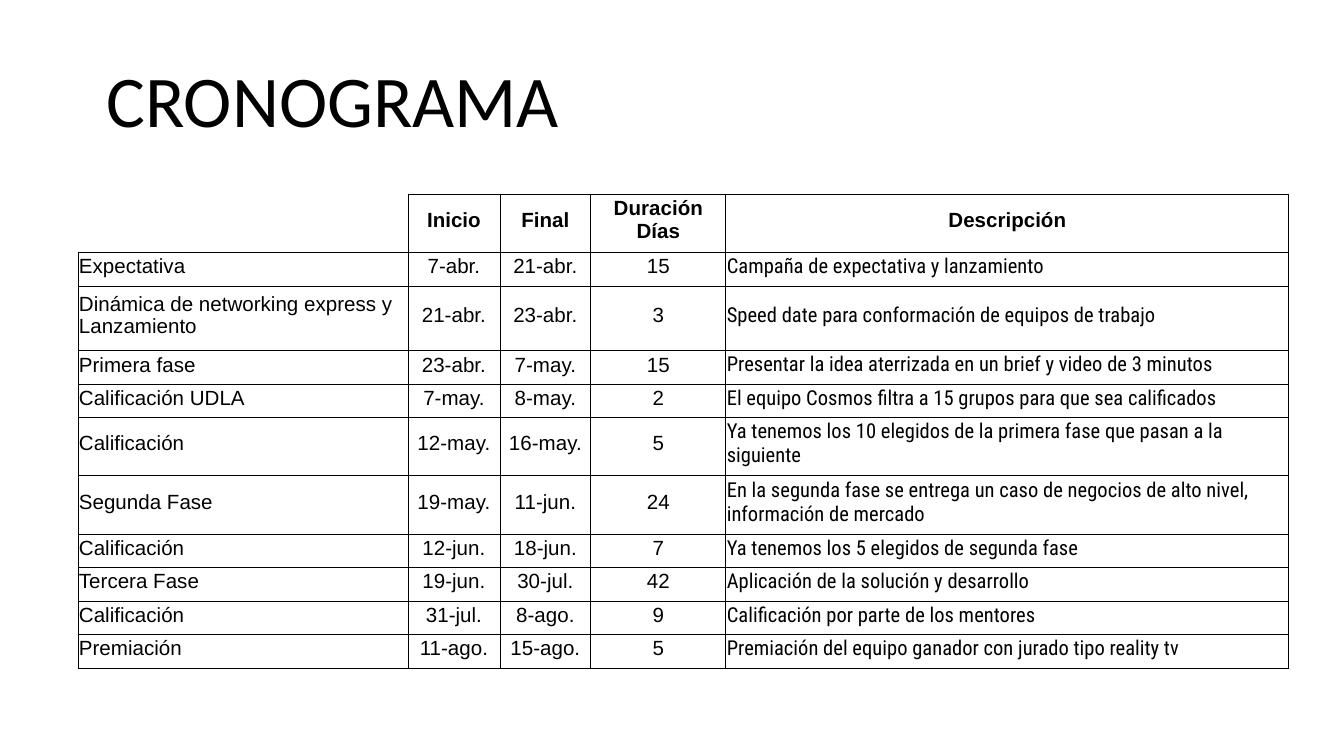
from lxml.etree import SubElement
from pptx import Presentation
from pptx.dml.color import RGBColor
from pptx.enum.text import MSO_ANCHOR, PP_ALIGN
from pptx.oxml.ns import qn
from pptx.util import Pt

COLORS = {"ink": "000000", "paper": "FFFFFF"}
TITLE = "CRONOGRAMA"
HEADINGS = ("", "Inicio", "Final", "Duración Días", "Descripción")
PHASES = [
    ("Expectativa", "7-abr.", "21-abr.", 15, "Campaña de expectativa y lanzamiento"),
    ("Dinámica de networking express y Lanzamiento", "21-abr.", "23-abr.", 3,
     "Speed date para conformación de equipos de trabajo"),
    ("Primera fase", "23-abr.", "7-may.", 15,
     "Presentar la idea aterrizada en un brief y video de 3 minutos"),
    ("Calificación UDLA", "7-may.", "8-may.", 2,
     "El equipo Cosmos filtra a 15 grupos para que sea calificados"),
    ("Calificación", "12-may.", "16-may.", 5,
     "Ya tenemos los 10 elegidos de la primera fase que pasan a la siguiente"),
    ("Segunda Fase", "19-may.", "11-jun.", 24,
     "En la segunda fase se entrega un caso de negocios de alto nivel, información de mercado"),
    ("Calificación", "12-jun.", "18-jun.", 7, "Ya tenemos los 5 elegidos de segunda fase"),
    ("Tercera Fase", "19-jun.", "30-jul.", 42, "Aplicación de la solución y desarrollo"),
    ("Calificación", "31-jul.", "8-ago.", 9, "Calificación por parte de los mentores"),
    ("Premiación", "11-ago.", "15-ago.", 5,
     "Premiación del equipo ganador con jurado tipo reality tv"),
]
COLUMN_WIDTHS = (330, 92, 91, 135, 563)
ROW_HEIGHTS = (58, 34, 65, 34, 33, 58, 59, 33, 34, 33, 34)
TITLE_FONT = {"name": "Calibri", "size": Pt(39), "bold": False}
CELL_FONT = {"name": "Arial", "size": Pt(11), "bold": False}
DESCRIPTION = len(HEADINGS) - 1


def px(length):
    return round(length * 914400 / 134.4)


CELL_FORMAT = {
    "vertical_anchor": MSO_ANCHOR.MIDDLE,
    "margin_left": px(1), "margin_top": px(1),
    "margin_right": px(1), "margin_bottom": px(7),
}


def apply(target, values):
    for name, value in values.items():
        setattr(target, name, value)


def write(paragraph, text, font):
    run = paragraph.add_run()
    run.text = text
    apply(run.font, font)
    run.font.color.rgb = RGBColor.from_string(COLORS["ink"])


def draw_borders(cell, visible):
    properties = cell._tc.get_or_add_tcPr()
    for side in "LRTB":
        border = SubElement(properties, qn(f"a:ln{side}"), w=str(Pt(0.5)))
        if side in visible:
            fill = SubElement(border, qn("a:solidFill"))
            SubElement(fill, qn("a:srgbClr"), val=COLORS["ink"])
        else:
            SubElement(border, qn("a:noFill"))


def add_title(slide):
    frame = slide.shapes.add_textbox(px(93), px(20), px(1158), px(167)).text_frame
    apply(frame, {"word_wrap": True, "vertical_anchor": MSO_ANCHOR.MIDDLE})
    heading = frame.paragraphs[0]
    apply(heading, {"line_spacing": 0.9, "space_after": Pt(6)})
    write(heading, TITLE, TITLE_FONT)


def add_schedule(slide):
    rows = [HEADINGS, *PHASES]
    schedule = slide.shapes.add_table(
        len(rows), len(HEADINGS), px(78), px(194),
        px(sum(COLUMN_WIDTHS)), px(sum(ROW_HEIGHTS))).table
    apply(schedule, {"first_row": False, "horz_banding": False})
    for column, width in zip(schedule.columns, COLUMN_WIDTHS):
        column.width = px(width)
    for row, height in zip(schedule.rows, ROW_HEIGHTS):
        row.height = px(height)
    for r, values in enumerate(rows):
        for c, value in enumerate(values):
            cell = schedule.cell(r, c)
            apply(cell, CELL_FORMAT)
            draw_borders(cell, "LRTB" if r or c else "RB")
            cell.fill.background()
            paragraph = cell.text_frame.paragraphs[0]
            centred = r == 0 or 0 < c < DESCRIPTION
            paragraph.alignment = PP_ALIGN.CENTER if centred else PP_ALIGN.LEFT
            font = dict(CELL_FONT, bold=r == 0)
            if r and c == DESCRIPTION:
                font["name"] = "Roboto Condensed"
            if value:
                write(paragraph, str(value), font)


def main():
    deck = Presentation()
    apply(deck, {"slide_width": px(1344), "slide_height": px(756)})
    slide = deck.slides.add_slide(deck.slide_layouts[6])
    background = slide.background.fill
    background.solid()
    background.fore_color.rgb = RGBColor.from_string(COLORS["paper"])
    add_title(slide)
    add_schedule(slide)
    deck.save("out.pptx")


if __name__ == "__main__":
    main()
